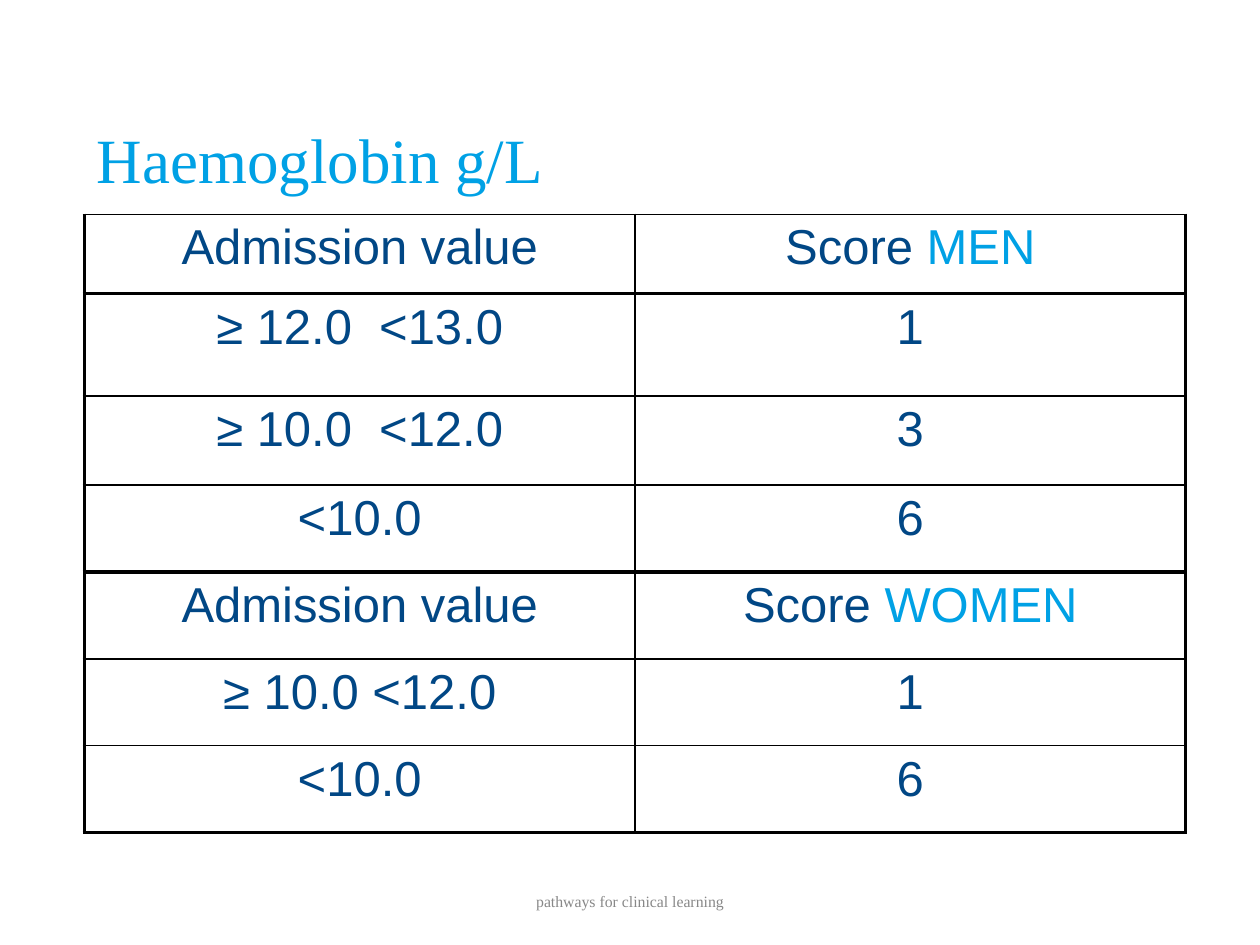
from lxml import etree
from pptx import Presentation
from pptx.dml.color import RGBColor
from pptx.enum.text import MSO_ANCHOR, PP_ALIGN
from pptx.oxml.ns import qn
from pptx.util import Cm, Pt

CENTER, LEFT = PP_ALIGN.CENTER, PP_ALIGN.LEFT
MIDDLE, TOP = MSO_ANCHOR.MIDDLE, MSO_ANCHOR.TOP
TITLE_ONLY = 5

THEME = {
    "serif": "Times New Roman", "sans": "Arial",
    "title_size": 36, "cell_size": 28, "footer_size": 9,
    "navy": "014785", "sky": "00A1E5", "grey": "888888", "border": "000000",
    "thin": 1, "heavy": 2.25,
}

TITLE = "Haemoglobin g/L"
FOOTER = "pathways for clinical learning"
# Each row: height in cm, admission value, score, highlighted group
SCORES = [
    (1.6, "Admission value", "Score ", "MEN"),
    (2.06, "≥ 12.0  <13.0", "1", ""),
    (1.8, "≥ 10.0  <12.0", "3", ""),
    (1.75, "<10.0", "6", ""),
    (1.75, "Admission value", "Score ", "WOMEN"),
    (1.75, "≥ 10.0 <12.0", "1", ""),
    (1.75, "<10.0", "6", ""),
]
HEAVY_RULES = {1, 4, len(SCORES)}  # horizontal rules, counted from the top edge
COLUMN_WIDTH = 11.1
TABLE_LEFT, TABLE_TOP = 1.7, 4.32


def style(font, family, size, color):
    font.name = THEME[family]
    font.size = Pt(THEME[size])
    font.color.rgb = RGBColor.from_string(THEME[color])


def write_line(frame, text, align, anchor, *look):
    frame.word_wrap = True
    frame.vertical_anchor = anchor
    paragraph = frame.paragraphs[0]
    paragraph.text = text
    paragraph.alignment = align
    style(paragraph.font, *look)
    return paragraph


def set_borders(cell, weights):
    """Draw the cell's edges from weights given as left, right, top, bottom."""
    properties = cell._tc.get_or_add_tcPr()
    for edge, weight in zip(("lnL", "lnR", "lnT", "lnB"), weights):
        line = etree.SubElement(properties, qn(f"a:{edge}"), w=str(Pt(THEME[weight])))
        fill = etree.SubElement(line, qn("a:solidFill"))
        etree.SubElement(fill, qn("a:srgbClr"), val=THEME["border"])


def rule_weight(is_heavy):
    return "heavy" if is_heavy else "thin"


def add_score_table(slide):
    table = slide.shapes.add_table(
        len(SCORES), 2, Cm(TABLE_LEFT), Cm(TABLE_TOP),
        Cm(2 * COLUMN_WIDTH), Cm(sum(row[0] for row in SCORES))).table
    table.first_row = table.horz_banding = False
    for column in table.columns:
        column.width = Cm(COLUMN_WIDTH)
    for r, (height, value, score, group) in enumerate(SCORES):
        table.rows[r].height = Cm(height)
        for c, text in enumerate((value, score)):
            cell = table.cell(r, c)
            paragraph = write_line(cell.text_frame, text, CENTER, TOP,
                                   "sans", "cell_size", "navy")
            if c == 1 and group:
                run = paragraph.add_run()
                run.text = group
                run.font.color.rgb = RGBColor.from_string(THEME["sky"])
            set_borders(cell, [rule_weight(heavy) for heavy in (
                c == 0, c == 1, r in HEAVY_RULES, r + 1 in HEAVY_RULES)])
            cell.fill.background()


def main():
    deck = Presentation()
    deck.slide_width, deck.slide_height = Cm(25.4), Cm(19.05)
    slide = deck.slides.add_slide(deck.slide_layouts[TITLE_ONLY])

    title = slide.shapes.title
    title.left, title.top, title.width, title.height = Cm(1.7), Cm(2.31), Cm(12.6), Cm(1.78)
    write_line(title.text_frame, TITLE, LEFT, TOP, "serif", "title_size", "sky")

    add_score_table(slide)

    footer = slide.shapes.add_textbox(Cm(8.4), Cm(17.65), Cm(8.6), Cm(1.02))
    write_line(footer.text_frame, FOOTER, CENTER, MIDDLE, "serif", "footer_size", "grey")

    deck.save("out.pptx")


if __name__ == "__main__":
    main()
